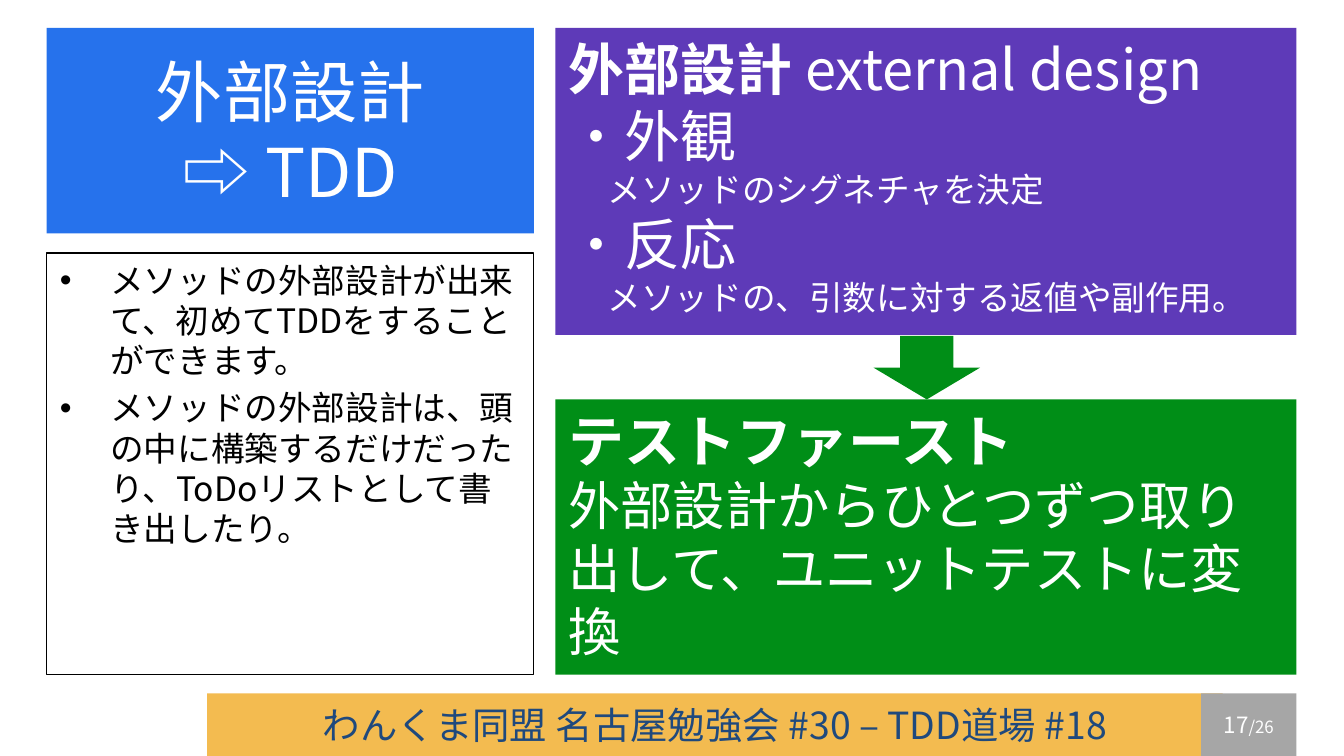
"""Build the slide on external design leading to TDD."""
from dataclasses import dataclass
from typing import Optional

from lxml.etree import SubElement
from pptx import Presentation
from pptx.dml.color import RGBColor
from pptx.enum.shapes import MSO_SHAPE
from pptx.enum.text import MSO_ANCHOR, MSO_AUTO_SIZE, PP_ALIGN
from pptx.oxml.ns import qn
from pptx.util import Pt

FONT = "Noto Sans CJK JP"
WHITE, BLACK, NAVY = "FFFFFF", "000000", "1F497D"
BLUE, PURPLE, GREEN = "2672EC", "5E3AB8", "008E17"
ORANGE, GRAY = "F3BB50", "A6A6A6"
LEFT, TOP, LEFT_W = 25, 15, 261
RIGHT, RIGHT_W = 297.5, 397
BOTTOM = 361.5
FOOTER_TOP, FOOTER_H = 371.5, 33.5


@dataclass
class Run:
    text: str
    size: float
    bold: bool = False


@dataclass
class Para:
    runs: list[Run]
    indent: float = 0
    bullet: bool = False
    before: float = 0


@dataclass
class Panel:
    box: tuple[float, float, float, float]
    paras: list[Para]
    fill: Optional[str] = None
    line: Optional[str] = None
    color: str = WHITE
    align: PP_ALIGN = PP_ALIGN.LEFT
    anchor: MSO_ANCHOR = MSO_ANCHOR.TOP
    kind: MSO_SHAPE = MSO_SHAPE.RECTANGLE


def rgb(value: str) -> RGBColor:
    return RGBColor.from_string(value)


def add_run(p, run: Run, color: str) -> None:
    r = p.add_run()
    r.text = run.text
    r.font.name = FONT
    r.font.size = Pt(run.size)
    r.font.bold = run.bold
    r.font.color.rgb = rgb(color)
    latin = r.font._element.find(qn("a:latin"))
    ea = latin.makeelement(qn("a:ea"), {"typeface": FONT})
    latin.addnext(ea)


def add_para(p, para: Para, panel: Panel) -> None:
    p.alignment = panel.align
    p.space_before = Pt(para.before)
    pPr = p._p.get_or_add_pPr()
    if para.indent:
        pPr.set("marL", str(Pt(para.indent)))
    if para.bullet:
        pPr.set("indent", str(-Pt(para.indent)))
        SubElement(pPr, qn("a:buFont"), typeface="Arial")
        SubElement(pPr, qn("a:buChar"), char="•")
    for run in para.runs:
        add_run(p, run, panel.color)


def format_panel(sp, panel: Panel) -> None:
    sp.left, sp.top, sp.width, sp.height = (Pt(v) for v in panel.box)
    if panel.fill:
        sp.fill.solid()
        sp.fill.fore_color.rgb = rgb(panel.fill)
    else:
        sp.fill.background()
    if panel.line:
        sp.line.color.rgb = rgb(panel.line)
        sp.line.width = Pt(0.75)
    else:
        sp.line.fill.background()
    tf = sp.text_frame
    tf.word_wrap = True
    tf.auto_size = MSO_AUTO_SIZE.NONE
    tf.vertical_anchor = panel.anchor
    for i, para in enumerate(panel.paras):
        add_para(tf.add_paragraph() if i else tf.paragraphs[0], para, panel)


def add_panel(s, panel: Panel) -> None:
    sp = s.shapes.add_shape(panel.kind, *(Pt(v) for v in panel.box))
    sp.shadow.inherit = False
    format_panel(sp, panel)


CENTERED = {"align": PP_ALIGN.CENTER, "anchor": MSO_ANCHOR.MIDDLE}

TITLE = Panel((LEFT, TOP, LEFT_W, 110),
              [Para([Run("外部設計", 36)]), Para([Run("⇨ TDD", 36)])],
              BLUE, **CENTERED)

PANELS = [
    Panel((111, FOOTER_TOP, 544, FOOTER_H),
          [Para([Run("わんくま同盟 名古屋勉強会 #30 – TDD道場 #18", 20)])],
          ORANGE, color=NAVY, **CENTERED),
    Panel((643.5, FOOTER_TOP, 51, FOOTER_H),
          [Para([Run("17", 12), Run("/26", 9)])], GRAY, **CENTERED),
    Panel((LEFT, 135.5, LEFT_W, BOTTOM - 135.5), [
        Para([Run("メソッドの外部設計が出来て、初めてTDDをすることができます。", 18)],
             27, True),
        Para([Run("メソッドの外部設計は、頭の中に構築するだけだったり、"
                  "ToDoリストとして書き出したり。", 18)], 27, True, 3.6),
    ], line=BLACK, color=BLACK),
    Panel((RIGHT, TOP, RIGHT_W, 164.5), [
        Para([Run("外部設計 ", 30, True), Run("external design", 30)]),
        Para([Run("・外観", 30)]),
        Para([Run("メソッドのシグネチャを決定", 18)], 21),
        Para([Run("・反応", 30)]),
        Para([Run("メソッドの、引数に対する返値や副作用。", 18)], 21),
    ], PURPLE),
    Panel((RIGHT, 214, RIGHT_W, BOTTOM - 214), [
        Para([Run("テストファースト", 30, True)]),
        Para([Run("外部設計からひとつずつ取り出して、ユニットテストに変換", 28)]),
    ], GREEN),
    Panel((468, 180, 57, 34), [], GREEN, kind=MSO_SHAPE.DOWN_ARROW),
]


def main() -> None:
    prs = Presentation()
    prs.slide_width, prs.slide_height = Pt(720), Pt(405)
    s = prs.slides.add_slide(prs.slide_layouts[5])
    format_panel(s.shapes.title, TITLE)
    for panel in PANELS:
        add_panel(s, panel)
    prs.save("out.pptx")


if __name__ == "__main__":
    main()
